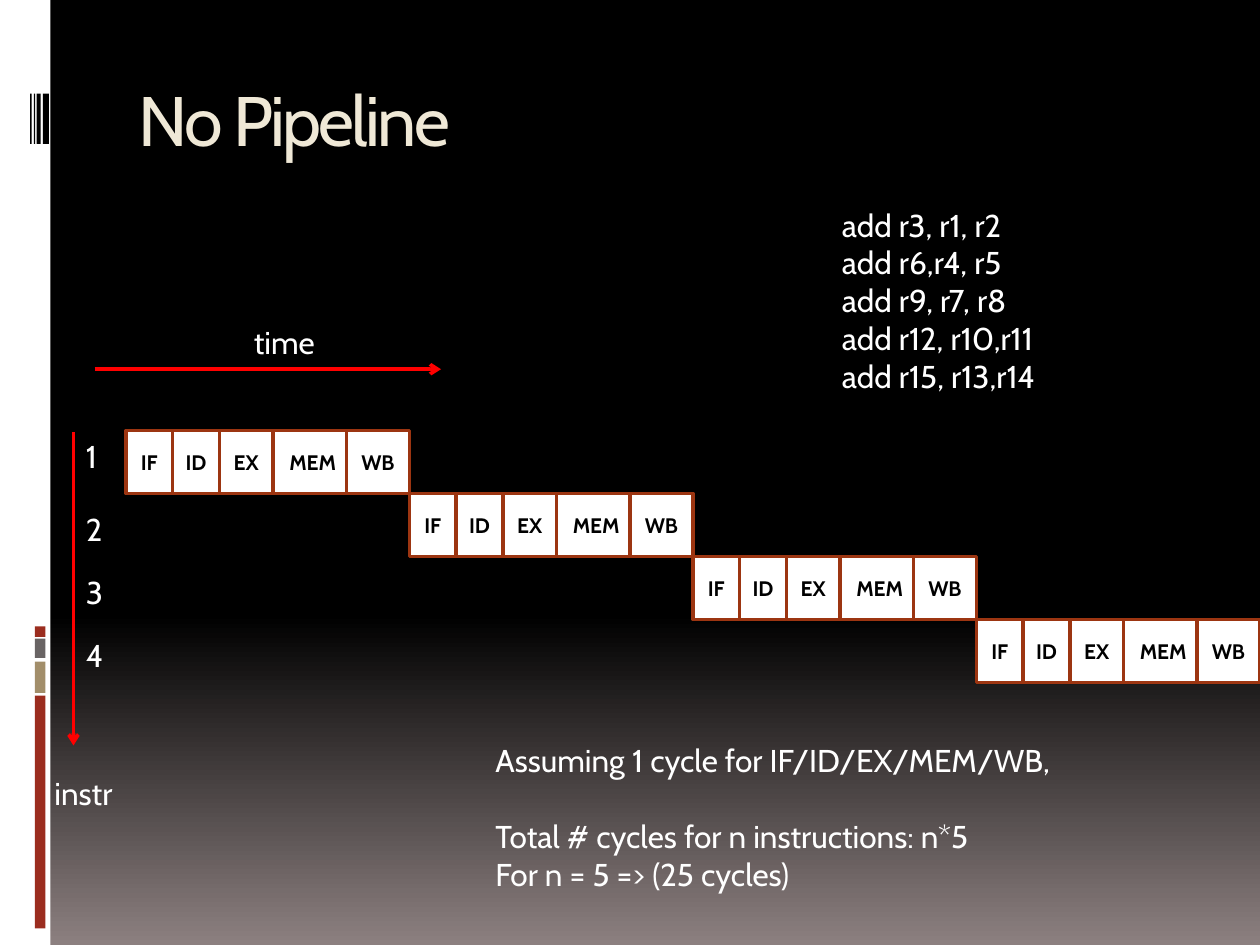
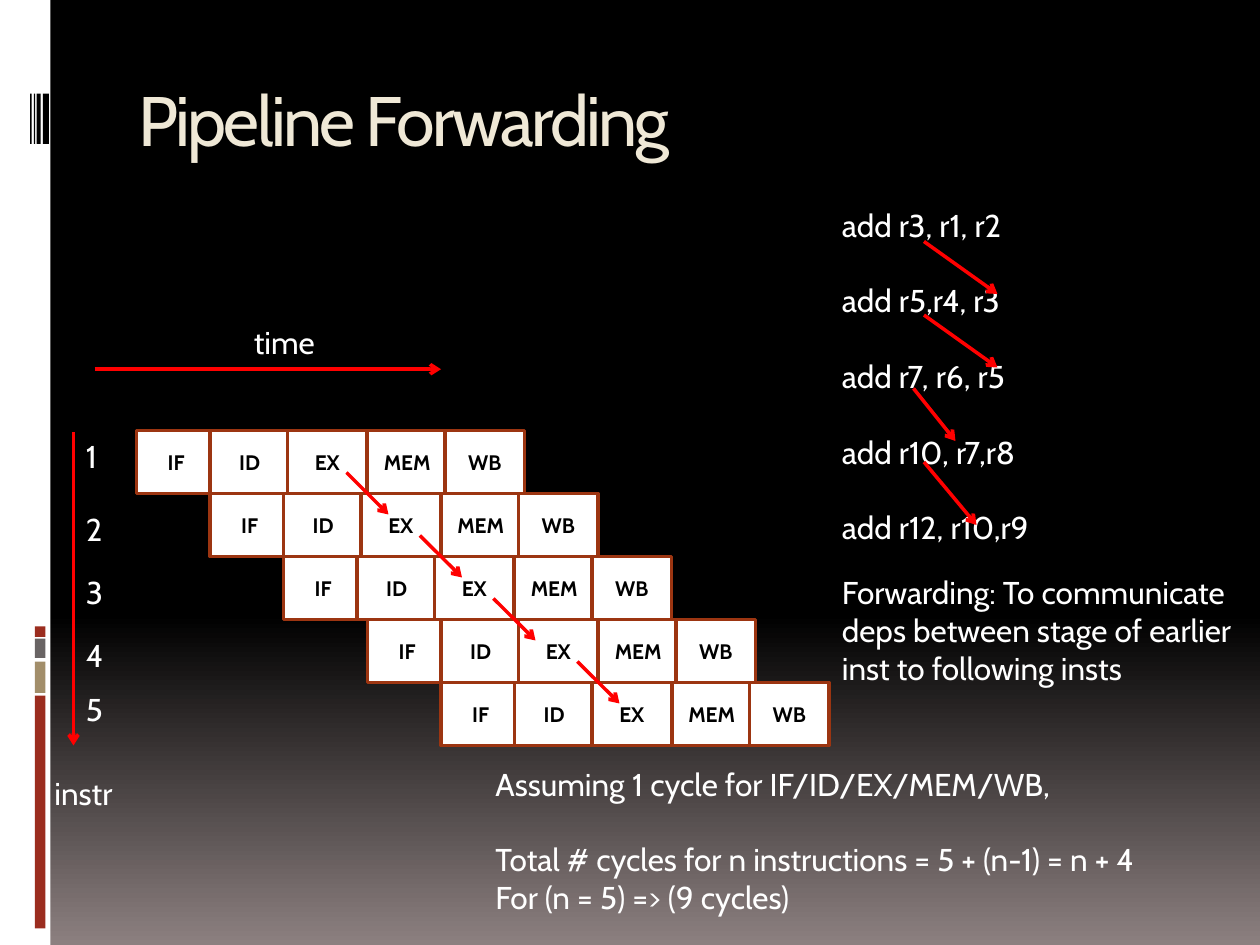
from copy import deepcopy
from lxml.etree import SubElement
from pptx import Presentation
from pptx.dml.color import RGBColor
from pptx.enum.shapes import MSO_CONNECTOR as CONN, MSO_SHAPE as SHAPE
from pptx.enum.text import MSO_ANCHOR as ANCHOR, MSO_AUTO_SIZE as AUTO, PP_ALIGN as ALIGN
from pptx.oxml.ns import qn
from pptx.util import Pt

rgb = RGBColor.from_string
WHITE, BLACK, RED = "FFFFFF", "000000", "FF0000"
RUST, SAND, GREY = "9B2D1F", "A28E6A", "696464"
CREAM, BORDER = "EFE8D6", "9C3511"


def write(tf, text, size=18, color=WHITE, bold=False, align=ALIGN.LEFT, spc=0, spaced=()):
    for i, line in enumerate(text.split("\n")):
        p = tf.paragraphs[0] if i == 0 else tf.add_paragraph()
        p.alignment = align
        if i in spaced:
            p.space_before = Pt(21.6)
        r = p.add_run()
        r.text = line
        r.font.name = "Cabin"
        r.font.size = Pt(size)
        r.font.bold = bold
        r.font.color.rgb = rgb(color)
        if spc:
            r.font._element.set("spc", str(spc))


def add_rect(s, x, y, w, h, fill):
    sp = s.shapes.add_shape(SHAPE.RECTANGLE, Pt(x), Pt(y), Pt(w), Pt(h))
    sp.shadow.inherit = False
    sp.fill.solid()
    sp.fill.fore_color.rgb = rgb(fill)
    sp.line.fill.background()
    return sp


prs = Presentation()
prs.slide_width, prs.slide_height = Pt(720), Pt(540)
layout = prs.slide_layouts[5]

for ph in list(layout.placeholders)[1:]:
    ph.element.getparent().remove(ph.element)
title = layout.placeholders[0]
title.left, title.top, title.width, title.height = Pt(72), Pt(40), Pt(612), Pt(72)

bg = layout.background.fill
bg.gradient()
bg.gradient_angle = 270
first = layout.element.xpath(".//a:gs")[0]
first.addnext(deepcopy(first))
for stop, (position, color) in zip(bg.gradient_stops, [(0, BLACK), (0.65, BLACK), (1, "8C8080")]):
    stop.position = position
    stop.color.rgb = rgb(color)

side_band = [
    (0, 0, 28.8, 540, WHITE),
    (20, 397.5, 6, 133, RUST),
    (20, 378, 6, 18, SAND),
    (20, 365, 6, 11, GREY),
    (20, 358, 6, 6, RUST),
    (24.5, 53.5, 3.5, 28.8, BLACK),
    (21, 53.5, 2.2, 28.8, BLACK),
    (19.4, 53.5, 0.8, 28.8, BLACK),
    (17.3, 53.5, 0.8, 28.8, BLACK),
]

stages = ["IF", "ID", "EX", "MEM", "WB"]
row_top, row_height = 246, 36
label_tops = [246, 288, 324, 360, 391]

slides = [
    dict(
        title="No Pipeline",
        starts=[72 + 162 * i for i in range(4)],
        offsets=[0, 26.7, 53.4, 84, 126],
        widths=[26.7, 26.7, 30.6, 45.4, 36],
        code="add r3, r1, r2\nadd r6,r4, r5\nadd r9, r7, r8\nadd r12, r10,r11\nadd r15, r13,r14",
        code_size=(130, 117),
        code_spaced=(),
        note="Assuming 1 cycle for IF/ID/EX/MEM/WB,\n"
             "Total # cycles for n instructions: n*5\nFor n = 5 => (25 cycles)",
        note_place=(276, 420, 366, 94),
        forwarding=False,
    ),
    dict(
        title="Pipeline Forwarding",
        starts=[78, 120, 162, 210, 252],
        offsets=[0, 42, 86.4, 132, 176.4],
        widths=[45.4] * 5,
        code="add r3, r1, r2\nadd r5,r4, r3\nadd r7, r6, r5\nadd r10, r7,r8\nadd r12, r10,r9",
        code_size=(122, 204),
        code_spaced=range(1, 5),
        note="Assuming 1 cycle for IF/ID/EX/MEM/WB,\n"
             "Total # cycles for n instructions = 5 + (n-1) = n + 4\nFor (n = 5) => (9 cycles)",
        note_place=(276, 433.5, 402, 94),
        forwarding=True,
    ),
]

for n, d in enumerate(slides):
    s = prs.slides.add_slide(layout)
    if n == 0:
        for band in side_band:
            layout.shapes.element.append(add_rect(s, *band).element)

    tf = s.shapes.title.text_frame
    tf.vertical_anchor = ANCHOR.TOP
    tf.auto_size = AUTO.NONE
    write(tf, d["title"], size=40, color=CREAM, spc=-150)

    for row, start in enumerate(d["starts"]):
        for stage, offset, width in zip(stages, d["offsets"], d["widths"]):
            sp = add_rect(s, start + offset, row_top + row * row_height, width, row_height, WHITE)
            sp.line.color.rgb = rgb(BORDER)
            sp.line.width = Pt(2)
            sp.text_frame.word_wrap = False
            write(sp.text_frame, stage, size=12, color=BLACK, bold=True, align=ALIGN.CENTER)

    texts = [
        ("instr", (24, 439, 50, 29), False, ()),
        ("time", (138, 181, 54, 29), False, ()),
        (d["code"], (474, 114, *d["code_size"]), False, d["code_spaced"]),
        (d["note"], d["note_place"], True, (1,)),
    ]
    for row, top in enumerate(label_tops[:len(d["starts"])]):
        texts.append((str(row + 1), (42, top, 24, 29), False, ()))

    arrows = [(42, 247, 42, 426), (54, 211, 252, 211)]
    if d["forwarding"]:
        texts.append((
            "Forwarding: To communicate\ndeps between stage of earlier\ninst to following insts",
            (474, 324, 240, 73), False, (),
        ))
        arrows += [(528, 138, 570, 168), (528, 180, 570, 210),
                   (522, 222, 546, 252), (528, 264, 558, 300)]
        for row, start in enumerate(d["starts"][:-1]):
            x, y = start + 120, row_top + 24 + row * row_height
            arrows.append((x, y, x + 24, y + 24))

    for text, place, wrap, spaced in texts:
        tf = s.shapes.add_textbox(*map(Pt, place)).text_frame
        tf.word_wrap = wrap
        tf.auto_size = AUTO.SHAPE_TO_FIT_TEXT
        write(tf, text, spaced=spaced)

    for ends in arrows:
        c = s.shapes.add_connector(CONN.STRAIGHT, *map(Pt, ends))
        c.line.color.rgb = rgb(RED)
        c.line.width = Pt(2)
        SubElement(c.line._get_or_add_ln(), qn("a:tailEnd"), type="arrow")
        SubElement(c.element.spPr, qn("a:effectLst"))

prs.save("out.pptx")
